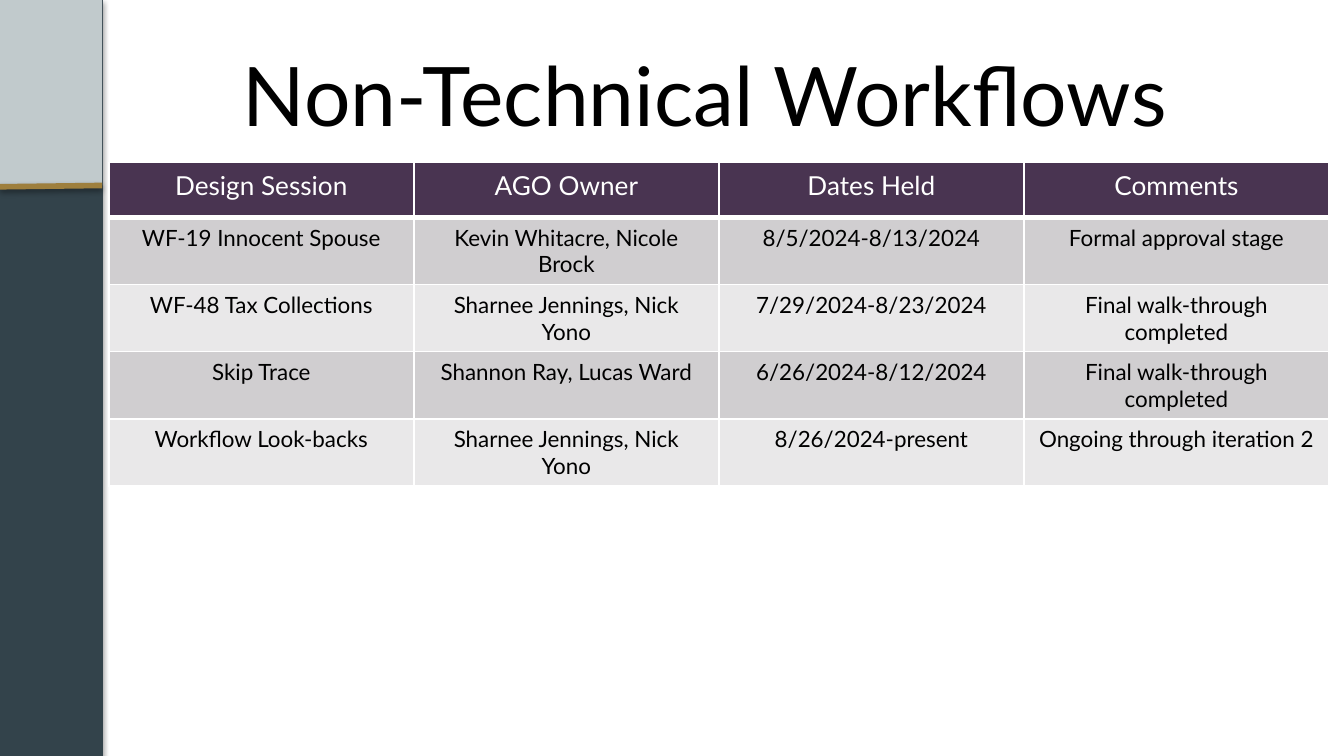
"""Build the Non-Technical Workflows status slide."""
import lxml.etree
import pptx
import pptx.dml.color
import pptx.enum.shapes
import pptx.enum.text
import pptx.oxml
import pptx.oxml.ns
import pptx.util
from pptx.util import Inches

FONT = "Lato"
SIDEBAR_WIDTH = 0.76
SLIDE_WIDTH = 10
SLIDE_HEIGHT = SLIDE_WIDTH * 9 / 16
HEADER_FILL = "493451"
BAND_FILLS = ("D0CED0", "E9E8E9")
ROWS = (
    ("Design Session", "AGO Owner", "Dates Held", "Comments"),
    ("WF-19 Innocent Spouse", "Kevin Whitacre, Nicole Brock",
     "8/5/2024-8/13/2024", "Formal approval stage"),
    ("WF-48 Tax Collections", "Sharnee Jennings, Nick Yono",
     "7/29/2024-8/23/2024", "Final walk-through completed"),
    ("Skip Trace", "Shannon Ray, Lucas Ward",
     "6/26/2024-8/12/2024", "Final walk-through completed"),
    ("Workflow Look-backs", "Sharnee Jennings, Nick Yono",
     "8/26/2024-present", "Ongoing through iteration 2"),
)


def color(value):
    """Return the colour object for a hex string."""
    return pptx.dml.color.RGBColor.from_string(value)


def add_child(parent, tag, **attributes):
    """Append a DrawingML element and return it."""
    child = lxml.etree.SubElement(parent, pptx.oxml.ns.qn(tag))
    for name, value in attributes.items():
        child.set(name, str(value))
    return child


def add_shadow(item, opacity, blur, distance):
    """Give a shape or line a soft black shadow that falls downward."""
    effects = add_child(item._element.spPr, "a:effectLst")
    shadow = add_child(effects, "a:outerShdw", blurRad=pptx.util.Pt(blur),
                       dist=pptx.util.Pt(distance), dir=90 * 60000,
                       algn="t", rotWithShape=0)
    shade = add_child(shadow, "a:srgbClr", val="000000")
    add_child(shade, "a:alpha", val=opacity * 1000)


def add_panel(slide, height, fill):
    """Add a sidebar rectangle that starts at the top left corner."""
    panel = slide.shapes.add_shape(
        pptx.enum.shapes.MSO_SHAPE.RECTANGLE, 0, 0,
        Inches(SIDEBAR_WIDTH), Inches(height))
    panel.fill.solid()
    panel.fill.fore_color.rgb = color(fill)
    return panel


def add_sidebar(slide):
    """Add the dark sidebar, its light top block and the gold rule."""
    sidebar = add_panel(slide, SLIDE_HEIGHT, "33434B")
    sidebar.line.color.rgb = color("33434B")
    sidebar.line.width = pptx.util.Pt(0.75)
    add_shadow(sidebar, 35, 3.1, 1.8)

    top_block = add_panel(slide, 1.38, "C1CACC")
    top_block.line.fill.background()
    top_block.shadow.inherit = False

    rule = slide.shapes.add_connector(
        pptx.enum.shapes.MSO_CONNECTOR.STRAIGHT,
        0, Inches(1.39), Inches(SIDEBAR_WIDTH), Inches(1.38))
    rule.line.color.rgb = color("9E7F3D")
    rule.line.width = pptx.util.Pt(3)
    add_shadow(rule, 38, 3.1, 1.6)


def write_centered(frame, text, size, text_color):
    """Put one centred paragraph in a text frame."""
    para = frame.paragraphs[0]
    para.text = text
    para.alignment = pptx.enum.text.PP_ALIGN.CENTER
    para.font.name = FONT
    para.font.size = pptx.util.Pt(size)
    para.font.color.rgb = color(text_color)


def add_title(slide, text):
    """Add the slide title."""
    box = slide.shapes.add_textbox(
        Inches(0.99), Inches(0.23), Inches(8.51), Inches(0.94))
    frame = box.text_frame
    frame.word_wrap = True
    frame.vertical_anchor = pptx.enum.text.MSO_ANCHOR.MIDDLE
    write_centered(frame, text, 44, "000000")


def set_borders(cell, widths):
    """Draw white cell borders with the given width for each side."""
    properties = cell._tc.get_or_add_tcPr()
    for side, width in widths.items():
        border = add_child(properties, f"a:ln{side}", w=pptx.util.Pt(width))
        fill = add_child(border, "a:solidFill")
        add_child(fill, "a:srgbClr", val="FFFFFF")


def add_workflow_table(slide):
    """Add the banded table of design sessions."""
    table = slide.shapes.add_table(
        len(ROWS), len(ROWS[0]), Inches(0.81), Inches(1.21),
        Inches(9.08), Inches(2.03)).table
    for row_index, values in enumerate(ROWS):
        is_header = row_index == 0
        fill = HEADER_FILL if is_header else BAND_FILLS[(row_index - 1) % 2]
        size, text_color = (14, "FFFFFF") if is_header else (12, "000000")
        top = 3 if row_index == 1 else 1
        bottom = 3 if is_header else 1
        for column_index, text in enumerate(values):
            cell = table.cell(row_index, column_index)
            set_borders(cell, {"L": 1, "R": 1, "T": top, "B": bottom})
            cell.fill.solid()
            cell.fill.fore_color.rgb = color(fill)
            write_centered(cell.text_frame, text, size, text_color)


def main():
    """Build and save the deck."""
    deck = pptx.Presentation()
    deck.slide_width = Inches(SLIDE_WIDTH)
    deck.slide_height = Inches(SLIDE_HEIGHT)
    slide = deck.slides.add_slide(deck.slide_layouts[6])
    add_sidebar(slide)
    add_title(slide, "Non-Technical Workflows")
    add_workflow_table(slide)
    deck.save("out.pptx")


if __name__ == "__main__":
    main()
